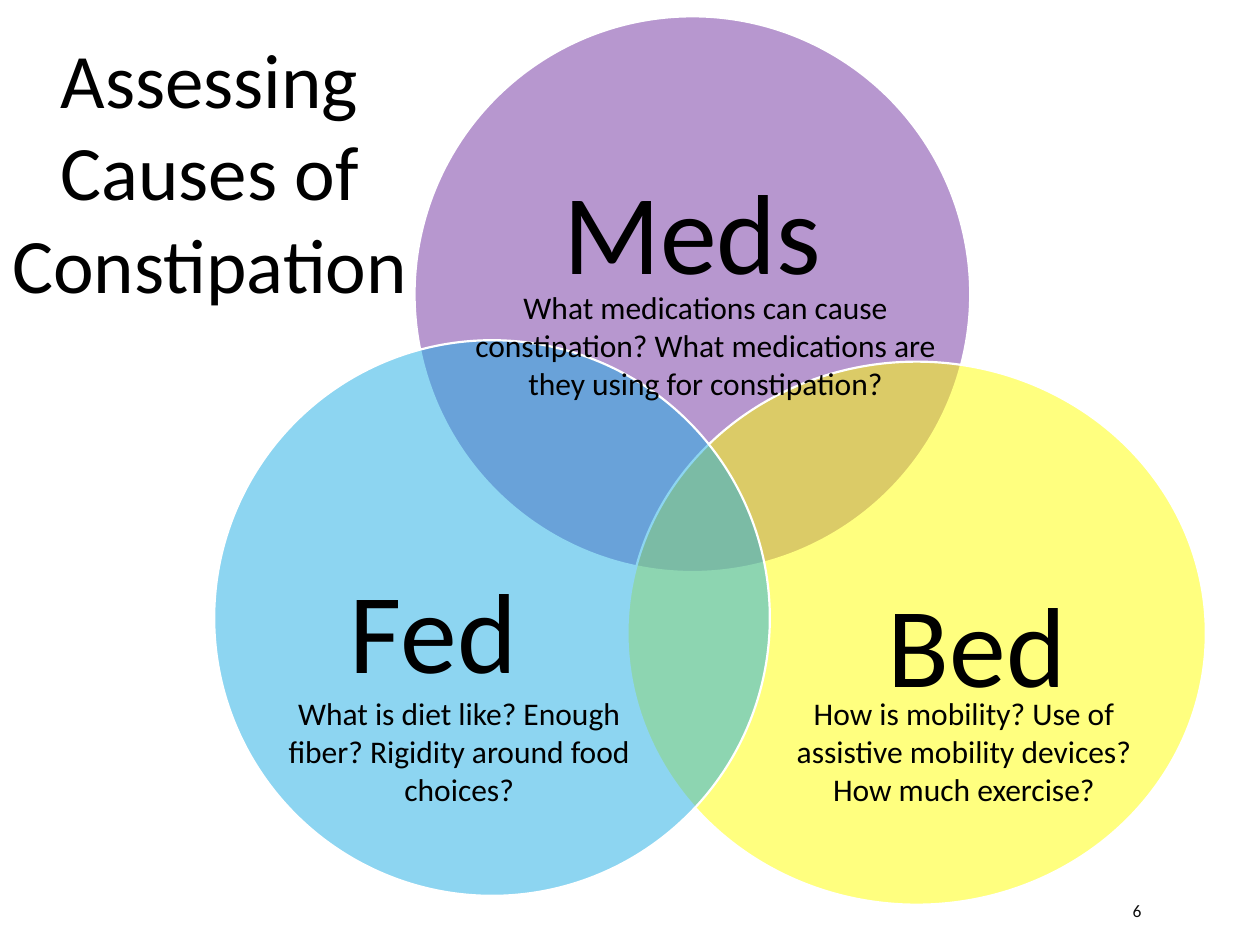
from typing import NamedTuple

from lxml.etree import SubElement
from pptx import Presentation
from pptx.dml.color import RGBColor
from pptx.enum.shapes import MSO_SHAPE
from pptx.enum.text import MSO_ANCHOR, PP_ALIGN
from pptx.oxml.ns import qn
from pptx.slide import Slide
from pptx.util import Inches, Pt

FONT = "Calibri"
BLACK = "000000"
WHITE = "FFFFFF"


class Box(NamedTuple):
    left: float
    top: float
    width: float
    height: float

    def lengths(self) -> list[Inches]:
        return [Inches(value) for value in self]


class Inset(NamedTuple):
    side: float = 0.1
    end: float = 0.05


class Cause(NamedTuple):
    name: str
    color: str
    circle: Box
    name_box: Box
    questions: str
    questions_box: Box


CAUSES = [
    Cause("Meds", "7030A0", Box(3.29, 0.13, 4.41, 4.41), Box(3.88, 0.9, 3.23, 1.98),
          "What medications can cause constipation? "
          "What medications are they using for constipation?",
          Box(3.65, 2.24, 3.9, 1.01)),
    Cause("Bed", "FFFF00", Box(4.98, 2.87, 4.59, 4.31), Box(6.38, 3.98, 2.75, 2.37),
          "How is mobility? Use of assistive mobility devices? How much exercise?",
          Box(6.14, 5.46, 3.02, 1.01)),
    Cause("Fed", "1CADE4", Box(1.7, 2.7, 4.41, 4.41), Box(2.12, 3.84, 2.64, 2.42),
          "What is diet like? Enough fiber? Rigidity around food choices?",
          Box(1.98, 5.46, 3.33, 1.01)),
]


def rgb(color: str) -> RGBColor:
    return RGBColor.from_string(color)


def add_circle(slide: Slide, box: Box, color: str) -> None:
    """Draw a half-transparent ellipse with a white outline."""
    circle = slide.shapes.add_shape(MSO_SHAPE.OVAL, *box.lengths())
    circle.shadow.inherit = False
    circle.fill.solid()
    circle.fill.fore_color.rgb = rgb(color)
    fill_color = circle.fill._xPr.find(qn("a:solidFill"))[0]
    SubElement(fill_color, qn("a:alpha"), val="50000")
    circle.line.color.rgb = rgb(WHITE)
    circle.line.width = Pt(1.25)


def add_text(slide: Slide, box: Box, text: str, size: float, color: str = BLACK,
             align: PP_ALIGN = PP_ALIGN.CENTER, anchor: MSO_ANCHOR = MSO_ANCHOR.TOP,
             inset: Inset = Inset(), line_spacing: float = 1.0) -> None:
    frame = slide.shapes.add_textbox(*box.lengths()).text_frame
    frame.word_wrap = True
    frame.vertical_anchor = anchor
    frame.margin_left = frame.margin_right = Inches(inset.side)
    frame.margin_top = frame.margin_bottom = Inches(inset.end)
    paragraph = frame.paragraphs[0]
    paragraph.alignment = align
    paragraph.line_spacing = line_spacing
    run = paragraph.add_run()
    run.text = text
    run.font.name = FONT
    run.font.size = Pt(size)
    run.font.color.rgb = rgb(color)


def main() -> None:
    presentation = Presentation()
    presentation.slide_width = Inches(10)
    presentation.slide_height = Inches(7.5)
    slide = presentation.slides.add_slide(presentation.slide_layouts[6])

    add_text(slide, Box(8.89, 7.08, 0.8, 0.3), "6", 10, "0D0D0D",
             align=PP_ALIGN.LEFT, anchor=MSO_ANCHOR.MIDDLE)
    for cause in CAUSES:
        add_circle(slide, cause.circle, cause.color)
        add_text(slide, cause.name_box, cause.name, 65,
                 anchor=MSO_ANCHOR.MIDDLE, inset=Inset(0, 0), line_spacing=0.9)
    for cause in CAUSES:
        add_text(slide, cause.questions_box, cause.questions, 18)
    add_text(slide, Box(0, 0.2, 3.33, 2.32), "Assessing Causes of Constipation", 44,
             inset=Inset(side=0.05))

    presentation.save("out.pptx")


if __name__ == "__main__":
    main()
